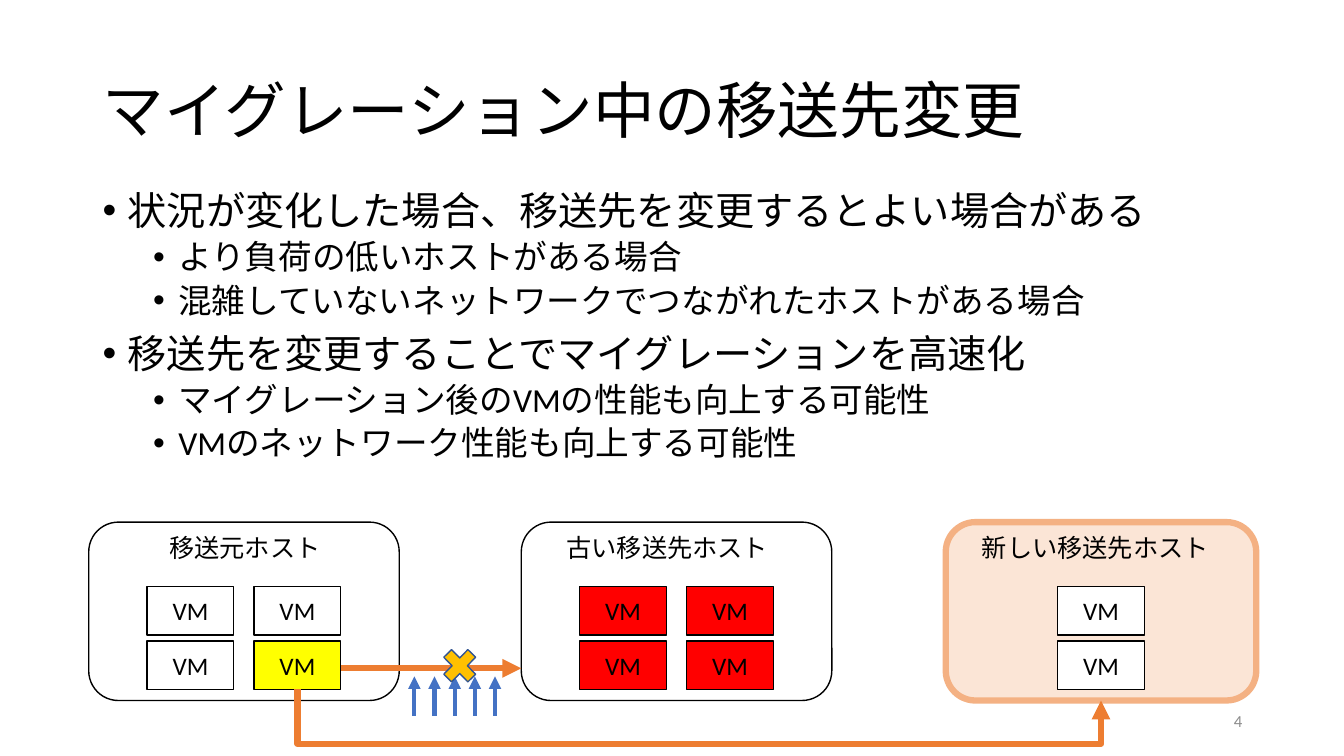
import pptx
import pptx.dml.color
import pptx.enum.shapes
import pptx.enum.text
import pptx.oxml
import pptx.oxml.ns
import pptx.util

Inches = pptx.util.Inches
Pt = pptx.util.Pt
RGBColor = pptx.dml.color.RGBColor
Shape = pptx.enum.shapes.MSO_SHAPE
Connector = pptx.enum.shapes.MSO_CONNECTOR
Align = pptx.enum.text.PP_ALIGN
Anchor = pptx.enum.text.MSO_ANCHOR
qn = pptx.oxml.ns.qn

BLACK = RGBColor(0x00, 0x00, 0x00)
WHITE = RGBColor(0xFF, 0xFF, 0xFF)
YELLOW = RGBColor(0xFF, 0xFF, 0x00)
RED = RGBColor(0xFF, 0x00, 0x00)
GREY = RGBColor(0x8C, 0x8C, 0x8C)
BLUE = RGBColor(0x44, 0x72, 0xC4)
DARK_BLUE = RGBColor(0x32, 0x54, 0x91)
ORANGE = RGBColor(0xED, 0x7D, 0x31)
LIGHT_ORANGE = RGBColor(0xF4, 0xB1, 0x83)
PALE_ORANGE = RGBColor(0xFB, 0xE5, 0xD6)
GOLD = RGBColor(0xFF, 0xC0, 0x00)
FONT = "Calibri"

TITLE = "マイグレーション中の移送先変更"
BULLETS = [
    (0, "状況が変化した場合、移送先を変更するとよい場合がある"),
    (1, "より負荷の低いホストがある場合"),
    (1, "混雑していないネットワークでつながれたホストがある場合"),
    (0, "移送先を変更することでマイグレーションを高速化"),
    (1, "マイグレーション後のVMの性能も向上する可能性"),
    (1, "VMのネットワーク性能も向上する可能性"),
]
BULLET_STYLES = [  # size, space before, left margin
    (28, 10, 0.25),
    (24, 5, 0.75),
]
HOSTS = [
    {"name": "移送元ホスト", "left": 0.88, "label": (1.58, 1.72), "vm_left": 1.46,
     "vm_rows": [[WHITE, WHITE], [WHITE, YELLOW]],
     "fill": None, "line": BLACK, "line_width": 1},
    {"name": "古い移送先ホスト", "left": 5.17, "label": (5.52, 2.38), "vm_left": 5.75,
     "vm_rows": [[RED, RED], [RED, RED]],
     "fill": None, "line": BLACK, "line_width": 1},
    {"name": "新しい移送先ホスト", "left": 9.38, "label": (9.64, 2.56), "vm_left": 10.49,
     "vm_rows": [[WHITE], [WHITE]],
     "fill": PALE_ORANGE, "line": LIGHT_ORANGE, "line_width": 4.5},
]
HOST_TOP, HOST_WIDTH, HOST_HEIGHT = 5.18, 3.08, 1.77
VM_TOP, VM_WIDTH, VM_HEIGHT = 5.82, 0.86, 0.48
VM_STEP_X, VM_STEP_Y = 1.06, 0.54
LOAD_ARROWS, LOAD_LEFT, LOAD_STEP = 5, 4.11, 0.2
REROUTE_START, REROUTE_END, REROUTE_BOTTOM = (2.95, 6.84), (10.92, 6.95), 7.38

presentation = pptx.Presentation()
presentation.slide_width = Inches(13.33)
presentation.slide_height = Inches(7.5)
slide = presentation.slides.add_slide(presentation.slide_layouts[6])
shapes = slide.shapes


def write(paragraph, text, size=18, color=BLACK, align=None, spacing=None):
    run = paragraph.add_run()
    run.text = text
    run.font.name = FONT
    run.font.size = Pt(size)
    run.font.color.rgb = color
    paragraph.alignment = align
    paragraph.line_spacing = spacing


def add_text_box(left, top, width, height, anchor=Anchor.TOP, wrap=True):
    frame = shapes.add_textbox(
        Inches(left), Inches(top), Inches(width), Inches(height)).text_frame
    frame.word_wrap = wrap
    frame.vertical_anchor = anchor
    return frame


def add_bullet(paragraph, level, text):
    size, space_before, margin = BULLET_STYLES[level]
    write(paragraph, text, size=size, spacing=0.9)
    paragraph.level = level
    paragraph.space_before = Pt(space_before)
    properties = paragraph._p.get_or_add_pPr()
    properties.set("marL", str(Inches(margin)))
    properties.set("indent", str(Inches(-0.25)))
    for tag, name, value in [("a:buFont", "typeface", "Arial"), ("a:buChar", "char", "•")]:
        pptx.oxml.ns  # namespace helpers
        element = properties.makeelement(qn(tag), {name: value})
        properties.append(element)


def add_shape(kind, left, top, width, height, fill=None, line=BLACK, line_width=1):
    shape = shapes.add_shape(
        kind, Inches(left), Inches(top), Inches(width), Inches(height))
    shape.shadow.inherit = False
    if fill is None:
        shape.fill.background()
    else:
        shape.fill.solid()
        shape.fill.fore_color.rgb = fill
    shape.line.color.rgb = line
    shape.line.width = Pt(line_width)
    return shape


def add_arrow(start, end, color, width, kind=Connector.STRAIGHT):
    connector = shapes.add_connector(kind, *[Inches(value) for value in (*start, *end)])
    connector.line.color.rgb = color
    connector.line.width = Pt(width)
    line = connector.line._get_or_add_ln()
    line.append(line.makeelement(qn("a:tailEnd"), {"type": "triangle"}))
    properties = connector._element.spPr
    properties.append(properties.makeelement(qn("a:effectLst"), {}))
    return connector


def add_reroute_arrow(start, end, bottom):
    """Elbow that leaves downward, runs along bottom and rises to its end."""
    center_x, center_y = (start[0] + end[0]) / 2, (start[1] + end[1]) / 2
    drop, span = end[1] - start[1], end[0] - start[0]
    connector = add_arrow(
        (center_x - drop / 2, center_y - span / 2),
        (center_x + drop / 2, center_y + span / 2),
        ORANGE, 4.5, kind=Connector.ELBOW)
    properties = connector._element.spPr
    frame = properties.find(qn("a:xfrm"))
    frame.set("rot", str(270 * 60000))
    frame.set("flipH", "1")
    adjustments = properties.find(qn("a:prstGeom")).get_or_add_avLst()
    ratio = round((bottom - start[1]) / drop * 100000)
    adjustments.append(adjustments.makeelement(
        qn("a:gd"), {"name": "adj1", "fmla": f"val {ratio}"}))


def add_host(host):
    add_shape(Shape.ROUNDED_RECTANGLE, host["left"], HOST_TOP, HOST_WIDTH, HOST_HEIGHT,
              fill=host["fill"], line=host["line"], line_width=host["line_width"])
    label_left, label_width = host["label"]
    label = add_text_box(label_left, 5.23, label_width, 0.4, wrap=False)
    write(label.paragraphs[0], host["name"])
    for row, colors in enumerate(host["vm_rows"]):
        for column, color in enumerate(colors):
            vm = add_shape(Shape.RECTANGLE, host["vm_left"] + column * VM_STEP_X,
                           VM_TOP + row * VM_STEP_Y, VM_WIDTH, VM_HEIGHT, fill=color)
            vm.text_frame.vertical_anchor = Anchor.MIDDLE
            write(vm.text_frame.paragraphs[0], "VM", align=Align.CENTER)


title = add_text_box(0.92, 0.4, 11.5, 1.45, anchor=Anchor.MIDDLE)
write(title.paragraphs[0], TITLE, size=44, spacing=0.9)

body = add_text_box(0.92, 1.85, 11.5, 4.76)
for index, (level, text) in enumerate(BULLETS):
    add_bullet(body.add_paragraph() if index else body.paragraphs[0], level, text)

for index in range(LOAD_ARROWS):
    x = LOAD_LEFT + index * LOAD_STEP
    add_arrow((x, 7.1), (x, 6.71), BLUE, 3)

for host in HOSTS:
    add_host(host)

add_arrow((3.38, 6.63), (5.17, 6.63), ORANGE, 4.5)
page_number = add_text_box(9.42, 6.95, 3, 0.4, anchor=Anchor.MIDDLE)
write(page_number.paragraphs[0], "4", size=12, color=GREY, align=Align.RIGHT)
add_reroute_arrow(REROUTE_START, REROUTE_END, REROUTE_BOTTOM)
add_shape(Shape.MATH_MULTIPLY, 4.33, 6.37, 0.46, 0.47, fill=GOLD, line=DARK_BLUE)

presentation.save("out.pptx")
